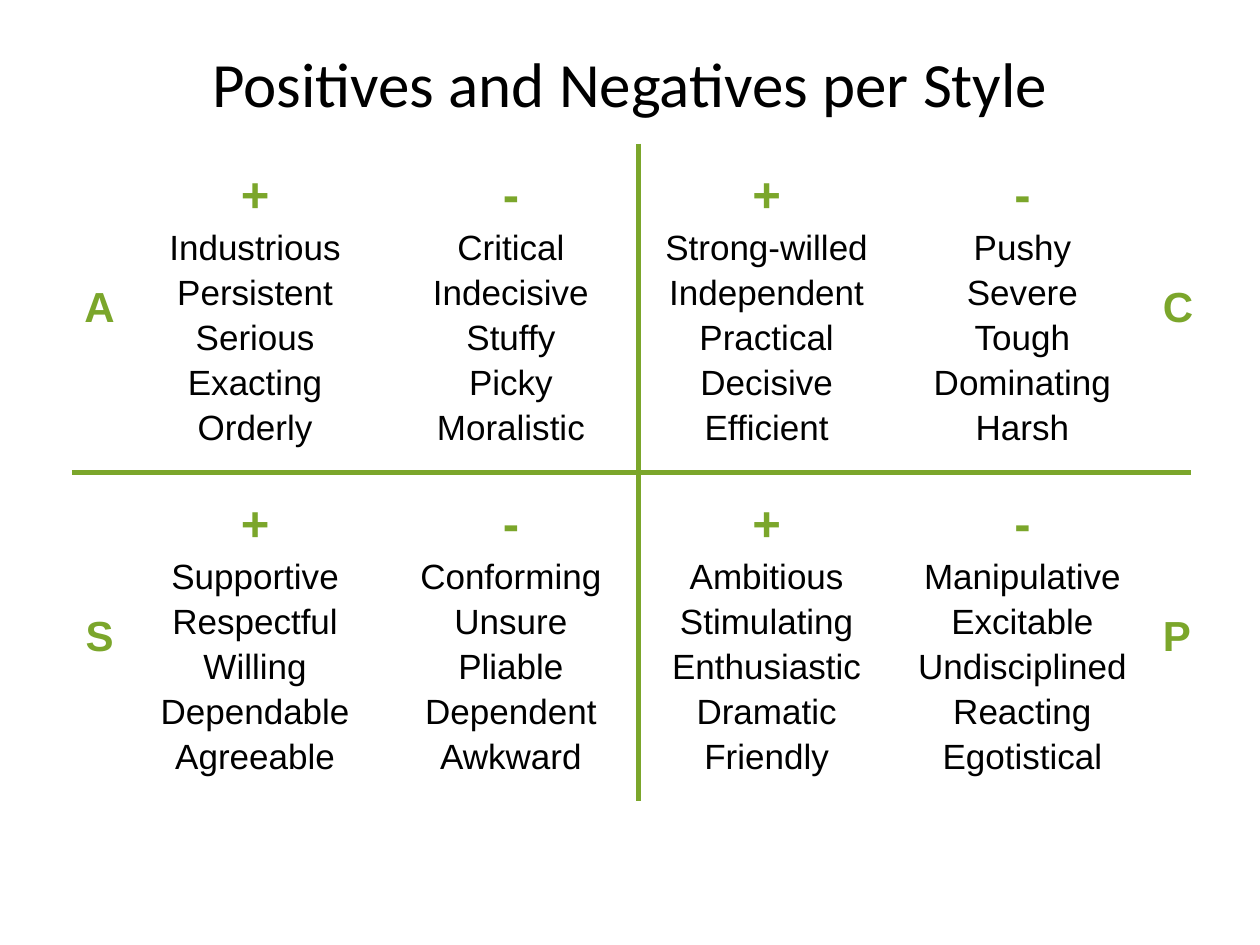
import lxml.etree
import pptx
import pptx.dml.color
import pptx.enum.text
import pptx.oxml.ns
import pptx.util

GREEN = pptx.dml.color.RGBColor(0x7B, 0xA6, 0x2B)
BLACK = pptx.dml.color.RGBColor(0x00, 0x00, 0x00)
CENTER = pptx.enum.text.PP_ALIGN.CENTER
MIDDLE = pptx.enum.text.MSO_ANCHOR.MIDDLE
Inches = pptx.util.Inches
Pt = pptx.util.Pt

COLUMN_WIDTHS = [0.44, 2.03, 2.03, 2.03, 2.03, 0.32]
ROW_HEIGHT = 2.61
LAST_LEFT_COLUMN = 2

# Each row: left letter, four trait lists (plus, minus, plus, minus), right letter.
STYLE_ROWS = [
    ["A",
     "+ Industrious Persistent Serious Exacting Orderly",
     "- Critical Indecisive Stuffy Picky Moralistic",
     "+ Strong-willed Independent Practical Decisive Efficient",
     "- Pushy Severe Tough Dominating Harsh",
     "C"],
    ["S",
     "+ Supportive Respectful Willing Dependable Agreeable",
     "- Conforming Unsure Pliable Dependent Awkward",
     "+ Ambitious Stimulating Enthusiastic Dramatic Friendly",
     "- Manipulative Excitable Undisciplined Reacting Egotistical",
     "P"],
]


def set_borders(cell, visible_sides):
    """Draw the given sides (letters of LRTB) in green and hide the others."""
    properties = cell._tc.get_or_add_tcPr()
    qn = pptx.oxml.ns.qn
    for side in "LRTB":
        line = lxml.etree.SubElement(properties, qn("a:ln" + side), w=str(Pt(3)))
        if side in visible_sides:
            fill = lxml.etree.SubElement(line, qn("a:solidFill"))
            lxml.etree.SubElement(fill, qn("a:srgbClr"), val=str(GREEN))
        else:
            lxml.etree.SubElement(line, qn("a:noFill"))


def format_paragraph(paragraph, font_name, size, color, bold=False):
    paragraph.alignment = CENTER
    paragraph.font.name = font_name
    paragraph.font.size = Pt(size)
    paragraph.font.color.rgb = color
    paragraph.font.bold = bold


presentation = pptx.Presentation()
presentation.slide_width = Inches(10)
presentation.slide_height = Inches(7.5)
slide = presentation.slides.add_slide(presentation.slide_layouts[6])

# Quadrant table
table = slide.shapes.add_table(
    len(STYLE_ROWS), len(COLUMN_WIDTHS), Inches(0.57), Inches(1.14),
    Inches(sum(COLUMN_WIDTHS)), Inches(ROW_HEIGHT * len(STYLE_ROWS))).table
table.first_row = False
table.horz_banding = False
for column, width in zip(table.columns, COLUMN_WIDTHS):
    column.width = Inches(width)

for row_index, style_row in enumerate(STYLE_ROWS):
    table.rows[row_index].height = Inches(ROW_HEIGHT)
    for column_index, entry in enumerate(style_row):
        cell = table.cell(row_index, column_index)
        sides = "B" if row_index == 0 else "T"
        if column_index == LAST_LEFT_COLUMN:
            sides += "R"
        elif column_index == LAST_LEFT_COLUMN + 1:
            sides += "L"
        set_borders(cell, sides)
        cell.fill.background()
        cell.vertical_anchor = MIDDLE

        words = entry.split()
        cell.text_frame.text = "\n".join(words)
        for word, paragraph in zip(words, cell.text_frame.paragraphs):
            is_trait = len(word) > 1
            size = 20 if is_trait else 28 if word in "+-" else 24
            format_paragraph(paragraph, "Arial", size,
                             BLACK if is_trait else GREEN, not is_trait)
            paragraph.space_before = Pt(size * 0.17)

# Title
title = slide.shapes.add_textbox(Inches(0.5), Inches(0.3), Inches(9), Inches(1.25))
title.text_frame.word_wrap = True
title.text_frame.text = "Positives and Negatives per Style"
format_paragraph(title.text_frame.paragraphs[0], "Calibri", 36, BLACK)

presentation.save("out.pptx")
